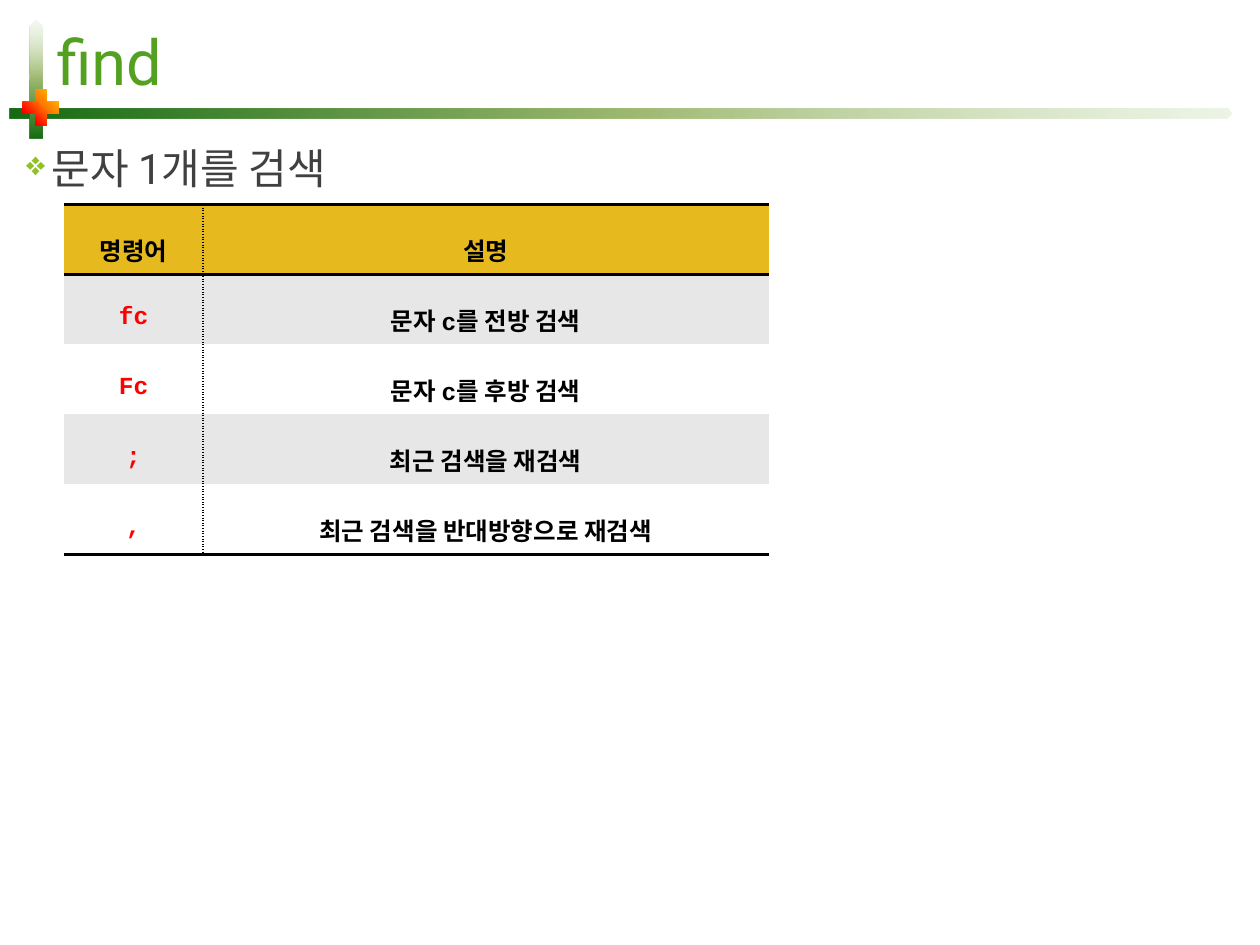
from dataclasses import dataclass

from lxml.etree import SubElement
from pptx import Presentation
from pptx.dml.color import RGBColor as Color
from pptx.enum.shapes import MSO_SHAPE as Preset
from pptx.enum.text import MSO_ANCHOR as Anchor, PP_ALIGN as Align
from pptx.oxml import parse_xml
from pptx.oxml.ns import nsdecls, qn
from pptx.util import Inches, Pt

COLUMNS, ROWS = 1000, 750
SLIDE_WIDTH, SLIDE_HEIGHT = Inches(10), Inches(7.5)


@dataclass(frozen=True)
class Theme:
    text_font: str = "Roboto"
    code_font: str = "Courier New"
    title_size: int = 36
    body_size: int = 24
    table_size: int = 14
    title: str = "54A021"
    body: str = "404040"
    bullet: str = "90C226"
    ink: str = "000000"
    command: str = "FF0000"
    header: str = "E6B91E"
    bands: tuple = ("E7E7E7", "FFFFFF")
    green_end: tuple = ((50, "9CB86E", 100), (100, "156B13", 100))
    flame: tuple = ((0, "FFF200", 100), (45, "FF7A00", 100),
                    (70, "FF0300", 100), (100, "4D0808", 100))


THEME = Theme()

COMMANDS = [
    ("명령어", "설명"),
    ("fc", "문자 c를 전방 검색"),
    ("Fc", "문자 c를 후방 검색"),
    (";", "최근 검색을 재검색"),
    (",", "최근 검색을 반대방향으로 재검색"),
]


def grid(left, top, width, height):
    column, row = SLIDE_WIDTH / COLUMNS, SLIDE_HEIGHT / ROWS
    return (round(left * column), round(top * row),
            round(width * column), round(height * row))


def add_run(paragraph, text, size, color, font, bold=False):
    run = paragraph.add_run()
    run.text = text
    run.font.size = Pt(size)
    run.font.name = font
    run.font.bold = bold
    run.font.color.rgb = Color.from_string(color)


def add_gradient_shape(slide, preset, box, stops, angle, rotation=0):
    shape = slide.shapes.add_shape(preset, *grid(*box))
    shape.rotation = rotation
    shape.shadow.inherit = False
    shape.line.fill.background()
    stop_xml = "".join(
        f'<a:gs pos="{position * 1000}"><a:srgbClr val="{color}">'
        f'<a:alpha val="{opacity * 1000}"/></a:srgbClr></a:gs>'
        for position, color, opacity in stops)
    gradient = parse_xml(
        f'<a:gradFill {nsdecls("a")} rotWithShape="1"><a:gsLst>{stop_xml}</a:gsLst>'
        f'<a:lin ang="{angle * 60000}" scaled="0"/></a:gradFill>')
    shape.element.spPr.find(qn("a:prstGeom")).addnext(gradient)


def add_text(slide, box, text, size, color, anchor):
    frame = slide.shapes.add_textbox(*grid(*box)).text_frame
    frame.word_wrap = True
    frame.vertical_anchor = anchor
    paragraph = frame.paragraphs[0]
    add_run(paragraph, text, size, color, THEME.text_font)
    return paragraph


def add_bullet(paragraph, character, color, percent):
    paragraph.space_before = Pt(10)
    properties = paragraph._p.get_or_add_pPr()
    properties.set("marL", str(Inches(0.2)))
    properties.set("indent", str(Inches(-0.38)))
    bullet_color = SubElement(properties, qn("a:buClr"))
    SubElement(bullet_color, qn("a:srgbClr"), val=color)
    SubElement(properties, qn("a:buSzPct"), val=str(percent * 1000))
    SubElement(properties, qn("a:buChar"), char=character)


def set_borders(cell, borders):
    properties = cell._tc.get_or_add_tcPr()
    for index, side in enumerate("LRTB"):
        width, dash = borders.get(side, (0, None))
        if width:
            content = (f'<a:solidFill><a:srgbClr val="{THEME.ink}"/></a:solidFill>'
                       f'<a:prstDash val="{dash}"/>')
        else:
            content = "<a:noFill/>"
        properties.insert(index, parse_xml(
            f'<a:ln{side} {nsdecls("a")} w="{Pt(width)}">{content}</a:ln{side}>'))


def fill_cell(cell, text, color, background):
    cell.fill.solid()
    cell.fill.fore_color.rgb = Color.from_string(background)
    cell.vertical_anchor = Anchor.MIDDLE
    paragraph = cell.text_frame.paragraphs[0]
    paragraph.alignment = Align.CENTER
    paragraph.line_spacing = 1.6
    add_run(paragraph, text, THEME.table_size, color, THEME.code_font, bold=True)


def add_command_table(slide, box, rows, column_shares):
    left, top, width, height = grid(*box)
    table = slide.shapes.add_table(
        len(rows), len(column_shares), left, top, width, height).table
    table.first_row = table.horz_banding = False
    for column, share in zip(table.columns, column_shares):
        column.width = round(width * share / sum(column_shares))
    rule, divider = (2, "solid"), (1, "sysDot")
    last = len(rows) - 1
    for row, texts in enumerate(rows):
        background = THEME.bands[(row - 1) % 2] if row else THEME.header
        for column, text in enumerate(texts):
            cell = table.cell(row, column)
            color = THEME.command if row and column == 0 else THEME.ink
            fill_cell(cell, text, color, background)
            borders = {"L" if column else "R": divider}
            if row in (0, 1):
                borders["T"] = rule
            if row in (0, last):
                borders["B"] = rule
            set_borders(cell, borders)


def add_decoration(slide):
    add_gradient_shape(slide, Preset.PENTAGON, (8, 86, 969, 8),
                       ((0, "DDEBCF", 50),) + THEME.green_end, 180)
    add_gradient_shape(slide, Preset.PENTAGON, (-18, 58, 93, 10),
                       ((0, "DDEBCF", 30),) + THEME.green_end, 180, rotation=270)
    add_gradient_shape(slide, Preset.MATH_PLUS, (13, 66, 39, 39), THEME.flame, 135)


def main():
    presentation = Presentation()
    presentation.slide_width, presentation.slide_height = SLIDE_WIDTH, SLIDE_HEIGHT
    slide = presentation.slides.add_slide(presentation.slide_layouts[6])
    add_decoration(slide)
    add_text(slide, (35, 10, 941, 76), "find",
             THEME.title_size, THEME.title, Anchor.MIDDLE)
    heading = add_text(slide, (11, 108, 966, 480), "문자 1개를 검색",
                       THEME.body_size, THEME.body, Anchor.TOP)
    add_bullet(heading, "❖", THEME.bullet, 80)
    add_command_table(slide, (51, 162, 559, 278), COMMANDS, (110, 449))
    presentation.save("out.pptx")


if __name__ == "__main__":
    main()
